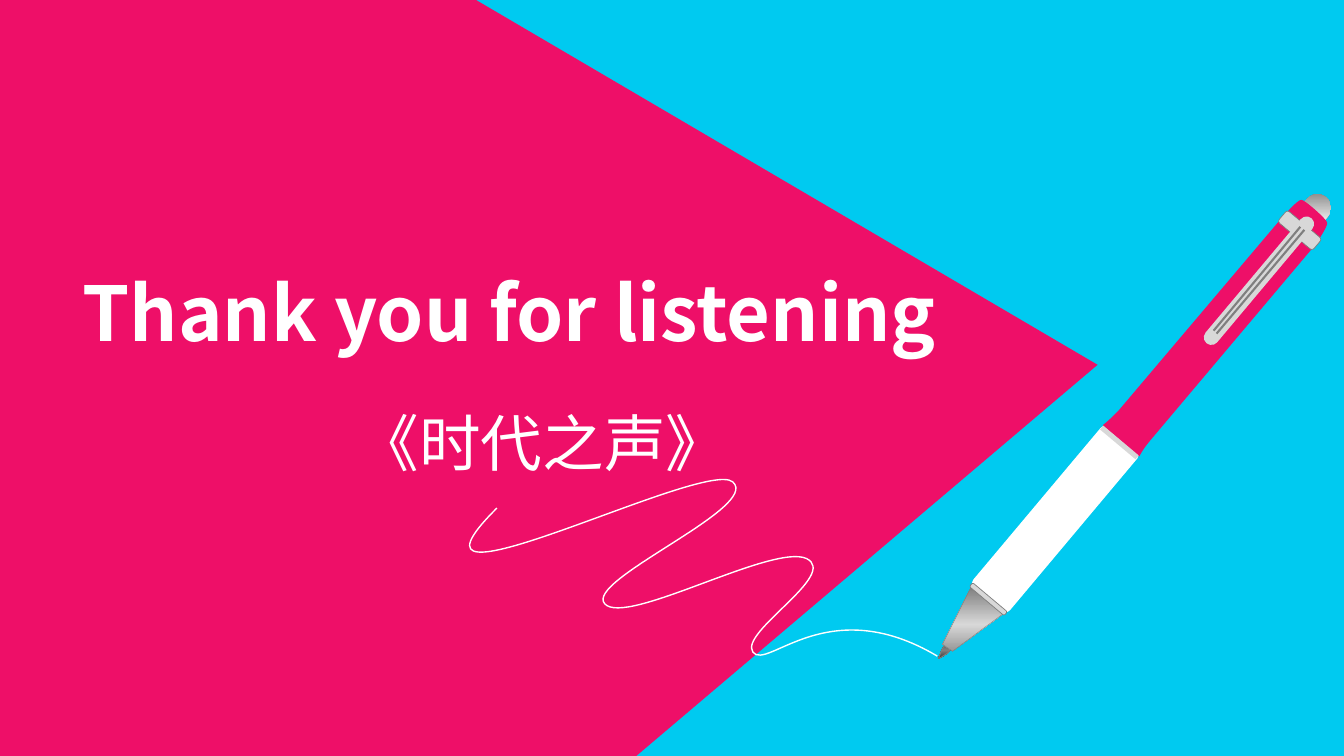
import math

from lxml import etree
from pptx import Presentation
from pptx.dml import color
from pptx.enum import shapes, text
from pptx.oxml import ns
from pptx.util import Pt

FONT = "Noto Sans CJK SC"
COLORS = {"cyan": "00CAF0", "pink": "EE0F68", "white": "FFFFFF",
          "silver": "D8D8D8", "grey": "7F7F7F", "ink": "262626"}
WIDTH, HEIGHT = 960, 540
PEN_TILT, TIP_TILT, ARROW_TILT = 310, 220, 90
CURVE_STEPS = 24

# text, left, top, width, height, size, bold
TEXTS = [
    ("Thank you for listening", 51.8, 186.5, 654.5, 72.7, 54, True),
    ("《时代之声》", 248.4, 285.8, 539.3, 99.4, 44, False),
]

# Outlines: a start point, then one point per line or three per Bezier curve
ARROW = [(0, 0), [(340, 0)], [(784, 260.6)], [(454.5, 540)], [(0, 540)]]
SQUIGGLE = [
    (355, 362.9),
    [(267.1, 450), (503.3, 326.9), (523.4, 344.2)],
    [(544.3, 362.2), (416.9, 414.7), (432, 431.3)],
    [(447.1, 447.8), (551.5, 388.1), (576, 398.9)],
    [(599.8, 410.4), (527.8, 451.4), (537.8, 465.8)],
    [(547.9, 479.5), (591.1, 421.9), (669.6, 468.7)],
]
NIB = [(673.2, 463), [(682.6, 451.4)], [(686.2, 455)], [(676.8, 466.6)],
       [(671, 470.2)], [(670.3, 470.2)]]
CONE = [(693.4, 419.8), [(716.4, 438.5)], [(680.4, 465.1)], [(673.2, 460.1)]]
BARREL = [
    (929.5, 143.3),
    [(931, 142.6), (947.5, 157), (947.5, 159.1)],
    [(948.2, 160.6), (942.5, 169.9), (938.2, 175.7)],
    [(822.2, 313.2)],
    [(817.2, 319), (815, 322.6), (813.6, 325.4)],
    [(788.4, 303.8)],
    [(792, 301), (794.9, 298.1), (799.2, 293.8)],
    [(915.1, 157)],
    [(920.2, 151.2), (927.4, 143.3), (929.5, 143.3)],
]

CAP_FILL = [(0, "grey"), (50, "white"), (100, "grey")]
CONE_FILL = [(0, "grey"), (50, "silver"), (100, "grey")]
NIB_FILL = [(0, "ink"), (20, "white"), (35, "white"), (64, "grey"), (100, "ink")]
NIB_FILL = [(0, "ink"), (64, "grey"), (100, "ink")]

# Back to front: outline, or (left, top, width, height, corner); fill; line; tilt
PEN_PARTS = [
    ((902.9, 151.9, 54, 19.4, 0.5), CAP_FILL, None, PEN_TILT),
    (NIB, NIB_FILL, ("grey", 0.75), TIP_TILT),
    ((679.7, 354.2, 148.3, 33.1, 0.107), "white", ("white", 1), PEN_TILT),
    (CONE, CONE_FILL, ("grey", 0.25), TIP_TILT),
    (BARREL, "pink", ("pink", 1), PEN_TILT),
    ((797.8, 299.5, 3.6, 33.1, 0), "silver", None, PEN_TILT),
    ((704.2, 411.8, 3.6, 32.4, 0.369), "silver", ("grey", 0.5), PEN_TILT),
    ((923, 148.3, 10.8, 32.4, 0.198), "silver", ("grey", 0.5), PEN_TILT),
    ((841, 195.1, 116.6, 10.8, 0.5), "silver", None, PEN_TILT),
]
CLIP_GROOVES = [((869, 238.3), (931.7, 164.2)), ((866.9, 236.2), (928.8, 162))]


def rgb(name):
    return color.RGBColor.from_string(COLORS[name])


def paint_gradient(shape, stops):
    """Fill from top to bottom of the slide, whatever the shape's rotation."""
    shape.fill.gradient()
    gradient = shape._element.spPr.find(ns.qn("a:gradFill"))
    gradient.set("rotWithShape", "0")
    for child in list(gradient):
        gradient.remove(child)
    stop_list = etree.SubElement(gradient, ns.qn("a:gsLst"))
    for percent, name in stops:
        stop = etree.SubElement(stop_list, ns.qn("a:gs"), pos=str(percent * 1000))
        etree.SubElement(stop, ns.qn("a:srgbClr"), val=COLORS[name])
    etree.SubElement(gradient, ns.qn("a:lin"), ang="5400000", scaled="0")


def paint(shape, fill, line):
    shape.shadow.inherit = False
    if fill is None:
        shape.fill.background()
    elif isinstance(fill, str):
        shape.fill.solid()
        shape.fill.fore_color.rgb = rgb(fill)
    else:
        paint_gradient(shape, fill)
    if line is None:
        shape.line.fill.background()
    else:
        shape.line.color.rgb = rgb(line[0])
        shape.line.width = Pt(line[1])


def turn(point, degrees):
    """Rotate a point clockwise about the slide's top left corner."""
    x, y = point
    cos, sin = math.cos(math.radians(degrees)), math.sin(math.radians(degrees))
    return x * cos - y * sin, x * sin + y * cos


def trace(outline):
    """List points along the outline, to measure its extent."""
    points = [outline[0]]
    for segment in outline[1:]:
        if len(segment) == 1:
            points.append(segment[0])
            continue
        controls = [points[-1], *segment]
        for step in range(1, CURVE_STEPS + 1):
            t = step / CURVE_STEPS
            weights = ((1 - t) ** 3, 3 * t * (1 - t) ** 2, 3 * t * t * (1 - t), t ** 3)
            points.append(tuple(sum(w * p[axis] for w, p in zip(weights, controls))
                                for axis in (0, 1)))
    return points


def add_outline(parent, outline, fill, line, tilt=0, close=True):
    """Draw an outline given as it shows, in a frame rotated by tilt."""
    upright = [turn(outline[0], -tilt)]
    upright += [[turn(point, -tilt) for point in segment] for segment in outline[1:]]
    xs, ys = zip(*trace(upright))
    left, top, right, bottom = min(xs), min(ys), max(xs), max(ys)
    builder = parent.build_freeform(Pt(left), Pt(top))
    builder.add_line_segments([(Pt(right), Pt(bottom))], close=close)
    shape = builder.convert_to_shape()

    route = next(shape._element.iter(ns.qn("a:path")))
    for child in list(route):
        route.remove(child)
    for index, segment in enumerate([upright[:1], *upright[1:]]):
        kind = "a:moveTo" if index == 0 else "a:lnTo" if len(segment) == 1 else "a:cubicBezTo"
        command = etree.SubElement(route, ns.qn(kind))
        for x, y in segment:
            etree.SubElement(command, ns.qn("a:pt"), x=str(Pt(x - left)), y=str(Pt(y - top)))
    if close:
        etree.SubElement(route, ns.qn("a:close"))

    center_x, center_y = turn(((left + right) / 2, (top + bottom) / 2), tilt)
    shape.left = Pt(center_x - (right - left) / 2)
    shape.top = Pt(center_y - (bottom - top) / 2)
    shape.rotation = tilt
    paint(shape, fill, line)


def add_box(parent, frame, fill, line, tilt=0):
    *place, corner = frame
    kind = shapes.MSO_SHAPE.ROUNDED_RECTANGLE if corner else shapes.MSO_SHAPE.RECTANGLE
    box = parent.add_shape(kind, *map(Pt, place))
    if corner:
        box.adjustments[0] = corner
    box.rotation = tilt
    paint(box, fill, line)


def add_text(page, words, left, top, width, height, size, bold):
    box = page.shapes.add_textbox(Pt(left), Pt(top), Pt(width), Pt(height))
    frame = box.text_frame
    frame.word_wrap = True
    frame.auto_size = text.MSO_AUTO_SIZE.SHAPE_TO_FIT_TEXT
    frame.text = words
    font = frame.paragraphs[0].runs[0].font
    font.name, font.size, font.bold = FONT, Pt(size), bold
    font.color.rgb = rgb("white")
    etree.SubElement(font._element, ns.qn("a:ea"), typeface=FONT)


def add_pen(page):
    pen = page.shapes.add_group_shape().shapes
    for form, *style in PEN_PARTS:
        add_part = add_box if isinstance(form, tuple) else add_outline
        add_part(pen, form, *style)
    for start, end in CLIP_GROOVES:
        groove = pen.add_connector(shapes.MSO_CONNECTOR.STRAIGHT, *map(Pt, start + end))
        groove.line.color.rgb = rgb("grey")
        groove.line.width = Pt(1.5)
        etree.SubElement(groove._element.spPr, ns.qn("a:effectLst"))


deck = Presentation()
deck.slide_width, deck.slide_height = Pt(WIDTH), Pt(HEIGHT)
page = deck.slides.add_slide(deck.slide_layouts[6])
add_box(page.shapes, (0, 0, WIDTH, HEIGHT, 0), "cyan", None)
add_outline(page.shapes, ARROW, "pink", None, ARROW_TILT)
for entry in TEXTS:
    add_text(page, *entry)
add_outline(page.shapes, SQUIGGLE, None, ("white", 1), close=False)
add_pen(page)
deck.save("out.pptx")
